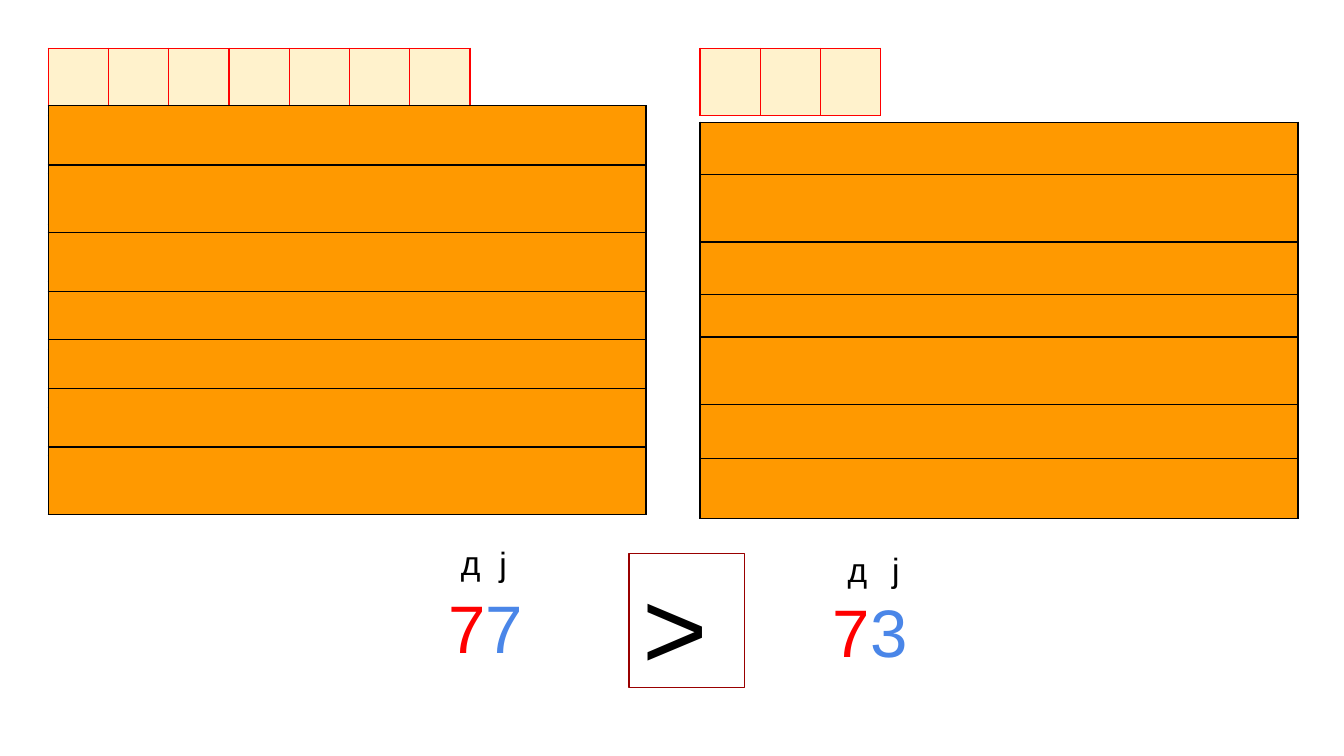
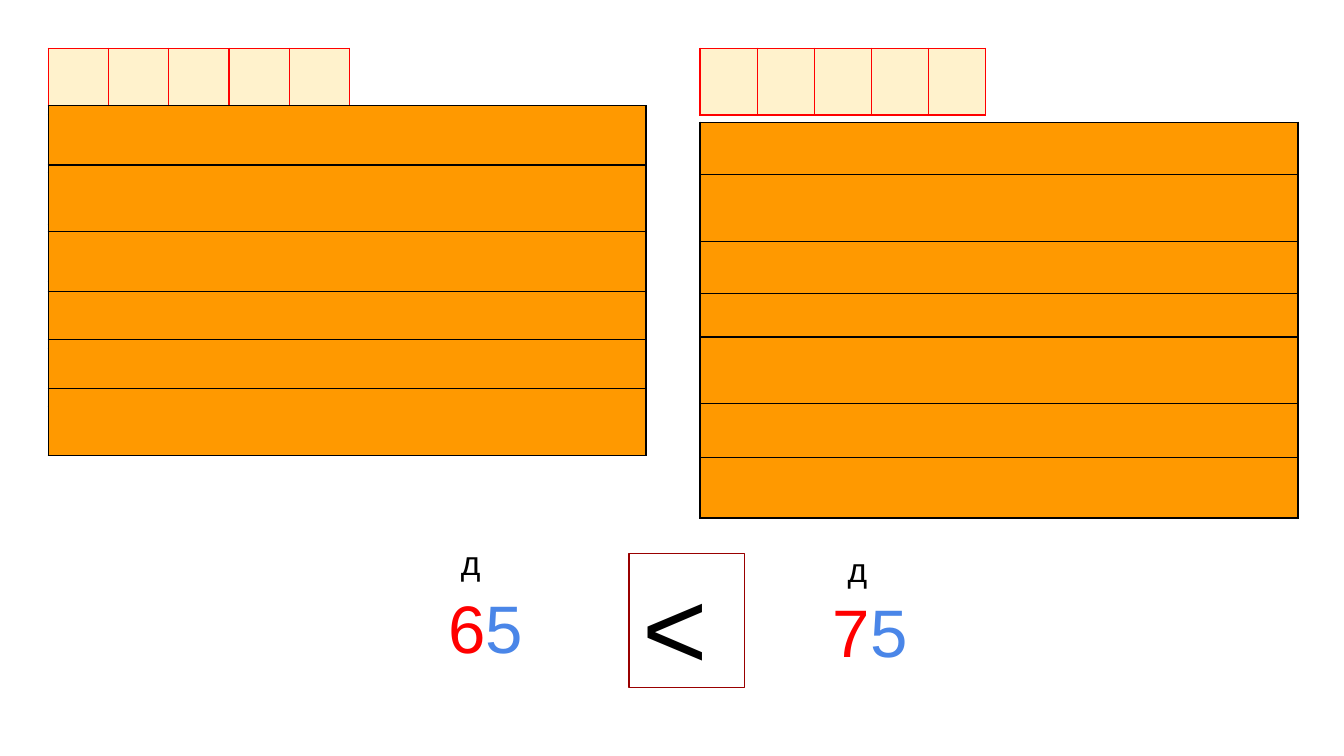
from lxml import etree
from pptx import Presentation
from pptx import util as u
from pptx.dml import color
from pptx.enum import shapes
from pptx.oxml import ns

FONT = "Arial"
BLACK, RED, BLUE, MAROON = "000000", "FF0000", "4A86E8", "990000"
ORANGE, CREAM = "FF9900", "FFF2CC"
BAR_WIDTH, BAR_HEIGHT = 11.3, 1.07
UNIT_HEIGHT = 1.09
LEFT_STACK, RIGHT_STACK = (0.91, 0.91), (13.23, 0.91)
LEFT_BARS = [4.42, 3.33, 1.09, 2.21, 5.51, 6.43, 7.54]
RIGHT_BARS = [4.42, 3.38, 1.4, 2.39, 7.62, 6.48, 5.46]


def rgb(code):
    """Turn a hex string into a colour."""
    return color.RGBColor.from_string(code)


def add_text(page, box, spans, size):
    """Write (text, colour) spans in a box given as left, top, width, height in cm."""
    frame = page.shapes.add_textbox(*map(u.Cm, box)).text_frame
    frame.word_wrap = True
    frame.margin_left = frame.margin_right = u.Cm(0.25)
    frame.margin_top = frame.margin_bottom = u.Cm(0.25)
    para = frame.paragraphs[0]
    para.line_spacing = 1.09
    for words, code in spans:
        span = para.add_run()
        span.text = words
        span.font.name = FONT
        span.font.size = u.Pt(size)
        span.font.color.rgb = rgb(code)


def format_cell(cell, fill, border):
    """Fill a cell and draw its four borders."""
    cell.margin_left = cell.margin_right = u.Cm(0.25)
    cell.margin_top = cell.margin_bottom = u.Cm(0.25)
    props = cell._tc.get_or_add_tcPr()
    for side in ("a:lnL", "a:lnR", "a:lnT", "a:lnB"):
        line = etree.SubElement(props, ns.qn(side), w=str(u.Pt(0.75)))
        paint = etree.SubElement(line, ns.qn("a:solidFill"))
        etree.SubElement(paint, ns.qn("a:srgbClr"), val=border)
    cell.fill.solid()
    cell.fill.fore_color.rgb = rgb(fill)


def add_strip(page, left, top, count, cell_width, height, fill, border):
    """Draw a one-row table of equal cells."""
    size = (u.Cm(left), u.Cm(top), u.Cm(count * cell_width), u.Cm(height))
    table = page.shapes.add_table(1, count, *size).table
    table.first_row = table.horz_banding = False
    for column in table.columns:
        column.width = u.Cm(cell_width)
    for cell in table.iter_cells():
        format_cell(cell, fill, border)


def add_stack(page, origin, bar_tops, units, unit_width=1.14):
    """Draw the unit squares and the ten bars below them."""
    left, top = origin
    add_strip(page, left, top, units, unit_width, UNIT_HEIGHT, CREAM, RED)
    for offset in bar_tops:
        add_strip(page, left, top + offset, 1, BAR_WIDTH, BAR_HEIGHT, ORANGE, BLACK)


def add_number(page, box, digits, labels, indent=""):
    """Write a two-digit number with its place labels, given as text and box offsets."""
    left, top, width, height = box
    tens, units = digits
    spans = [(indent, BLACK)] if indent else []
    add_text(page, box, spans + [(tens, RED), (units, BLUE)], 36)
    for words, (across, down, wide, high) in labels:
        add_text(page, (left + across, top + down, wide, high), [(words, BLACK)], 18)


def add_sign(page, box, sign):
    """Draw the framed comparison sign."""
    left, top, width, height = box
    frame = page.shapes.add_shape(shapes.MSO_SHAPE.RECTANGLE, *map(u.Cm, box))
    frame.shadow.inherit = False
    frame.fill.background()
    frame.line.color.rgb = rgb(MAROON)
    frame.line.width = u.Pt(0.75)
    add_text(page, (left, top - 0.4, 1.65, 3.33), [(sign, BLACK)], 60)


def add_comparison(deck, first, sign, second, label_count, second_unit_width):
    """Build a slide that compares two numbers by tens and units."""
    page = deck.slides.add_slide(deck.slide_layouts[6])
    add_stack(page, LEFT_STACK, LEFT_BARS[:int(first[0])], int(first[1]))
    add_stack(page, RIGHT_STACK, RIGHT_BARS[:int(second[0])], int(second[1]),
              second_unit_width)
    first_labels = [("д", (0.59, -0.76, 1.17, 1.37)), ("ј", (1.32, -0.74, 0.97, 1.09))]
    second_labels = [("д", (0.28, -0.71, 1.17, 1.09)), ("ј", (1.12, -0.71, 0.79, 1.09))]
    add_number(page, (7.87, 10.69, 10.77, 2.06), first, first_labels[:label_count], " ")
    add_number(page, (15.49, 10.77, 4.5, 1.9), second, second_labels[:label_count])
    add_sign(page, (11.89, 10.46, 2.18, 2.54), sign)


def main():
    """Build and save the deck."""
    deck = Presentation()
    deck.slide_width, deck.slide_height = u.Cm(25.4), u.Cm(14.29)
    add_comparison(deck, "77", ">", "73", 2, 1.14)
    add_comparison(deck, "65", "<", "75", 1, 1.08)
    deck.save("out.pptx")


if __name__ == "__main__":
    main()
